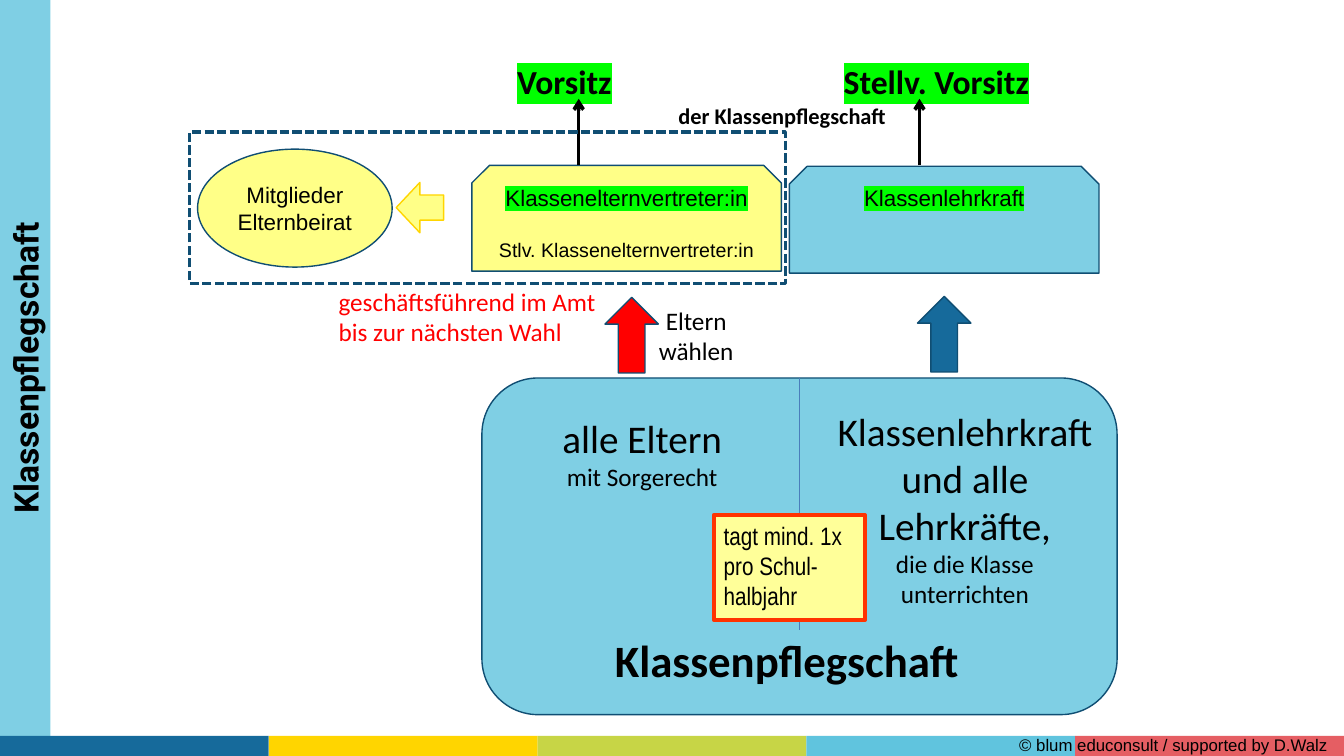
from lxml.etree import SubElement
from pptx import Presentation
from pptx.dml.color import RGBColor
from pptx.enum.dml import MSO_LINE
from pptx.enum.shapes import MSO_CONNECTOR, MSO_SHAPE
from pptx.enum.text import MSO_ANCHOR, PP_ALIGN
from pptx.oxml.ns import qn
from pptx.util import Inches, Pt

BLACK = RGBColor(0x00, 0x00, 0x00)
RED = RGBColor(0xFF, 0x00, 0x00)
ORANGE = RGBColor(0xFF, 0x33, 0x00)
GREEN = RGBColor(0x00, 0xFF, 0x00)
YELLOW = RGBColor(0xFF, 0xFF, 0x87)
NOTE_YELLOW = RGBColor(0xFF, 0xFF, 0x99)
GOLD = RGBColor(0xFF, 0xD5, 0x00)
LIME = RGBColor(0xC7, 0xD5, 0x46)
SKY = RGBColor(0x60, 0xC4, 0xDE)
CORAL = RGBColor(0xE5, 0x5E, 0x63)
BLUE = RGBColor(0x16, 0x6A, 0x9B)
NAVY = RGBColor(0x10, 0x4E, 0x73)
DIVIDER = RGBColor(0x4A, 0x7E, 0xBB)


def paint(shape, color, alpha=100):
    shape.fill.solid()
    shape.fill.fore_color.rgb = color
    if alpha < 100:
        tint = shape.fill._xPr.find(qn("a:solidFill"))[0]
        SubElement(tint, qn("a:alpha")).set("val", str(alpha * 1000))


def add_block(page, kind, place, fill=None, line=NAVY, width=1, alpha=100):
    block = page.shapes.add_shape(kind, *map(Inches, place))
    block.shadow.inherit = False
    if fill is None:
        block.fill.background()
    else:
        paint(block, fill, alpha)
    if line is None:
        block.line.fill.background()
    else:
        block.line.color.rgb = line
        block.line.width = Pt(width)
    return block


def add_line(page, start, end, color, width, arrow=False):
    points = map(Inches, (*start, *end))
    line = page.shapes.add_connector(MSO_CONNECTOR.STRAIGHT, *points)
    line.line.color.rgb = color
    line.line.width = Pt(width)
    properties = line._element.spPr
    if arrow:
        SubElement(properties.find(qn("a:ln")), qn("a:tailEnd")).set("type", "arrow")
    SubElement(properties, qn("a:effectLst"))


def add_span(para, text, size, font="Calibri", color=BLACK, bold=False, mark=None):
    span = para.add_run()
    span.text = text
    span.font.size = Pt(size)
    span.font.bold = bold
    span.font.color.rgb = color
    if mark is not None:
        highlight = SubElement(span.font._element, qn("a:highlight"))
        SubElement(highlight, qn("a:srgbClr")).set("val", str(mark))
    span.font.name = font


def write(shape, lines, align=PP_ALIGN.CENTER, anchor=MSO_ANCHOR.MIDDLE, wrap=True):
    """Each line is a (text, size, options) tuple and becomes one paragraph."""
    frame = shape.text_frame
    frame.word_wrap = wrap
    frame.vertical_anchor = anchor
    for number, (text, size, options) in enumerate(lines):
        para = frame.paragraphs[0] if number == 0 else frame.add_paragraph()
        para.alignment = align
        add_span(para, text, size, **options)
    return frame


def add_label(page, place, lines, align=PP_ALIGN.CENTER, wrap=True):
    box = page.shapes.add_textbox(*map(Inches, place))
    write(box, lines, align, MSO_ANCHOR.TOP, wrap)


def add_tab(para, position):
    tabs = SubElement(para._p.get_or_add_pPr(), qn("a:tabLst"))
    SubElement(tabs, qn("a:tab"), pos=str(Inches(position)), algn="l")


def add_frame(page):
    # Colour band along the bottom
    band = 13.33 / 5
    for number, color in enumerate((BLUE, GOLD, LIME, SKY, CORAL)):
        add_block(page, MSO_SHAPE.RECTANGLE, (number * band, 7.3, band, 0.2), color, None)

    # Title as a vertical side bar
    title = page.shapes.title
    title.left, title.top, title.width, title.height = map(Inches, (-3.4, 3.4, 7.3, 0.5))
    title.rotation = 270
    paint(title, SKY, 80)
    write(title, [("Klassenpflegschaft", 24, {"font": "Roboto", "bold": True})])


def add_assembly(page):
    # Large box with its two halves
    add_block(page, MSO_SHAPE.ROUNDED_RECTANGLE, (4.78, 3.75, 6.3, 3.34), SKY, alpha=80)
    add_line(page, (7.93, 3.75), (7.93, 6.25), DIVIDER, 0.75)
    add_label(page, (4.95, 4.06, 2.84, 0.93),
              [("alle Eltern", 28, {}), ("mit Sorgerecht", 18, {})])
    add_label(page, (8.15, 3.99, 2.84, 2.12),
              [("Klassenlehrkraft und alle Lehrkräfte,", 28, {}),
               ("die die Klasse unterrichten", 18, {})])
    add_label(page, (6, 6.23, 3.65, 0.68),
              [("Klassenpflegschaft", 32, {"bold": True})], PP_ALIGN.LEFT, False)

    # Arrows up to the representatives
    add_block(page, MSO_SHAPE.UP_ARROW, (6, 2.95, 0.53, 0.75), RED)
    add_block(page, MSO_SHAPE.UP_ARROW, (9.1, 2.94, 0.53, 0.75), BLUE)
    add_label(page, (6.43, 2.98, 0.95, 0.75),
              [("Eltern", 18, {}), ("wählen", 18, {})], wrap=False)


def add_representatives(page):
    arial = {"font": "Arial"}
    marked = {"font": "Arial", "mark": GREEN}
    snipped = MSO_SHAPE.SNIP_2_SAME_RECTANGLE

    parents = add_block(page, snipped, (4.68, 1.64, 3.07, 1.05), YELLOW)
    frame = write(parents, [("Klassenelternvertreter:in", 16, marked),
                            ("Stlv. Klassenelternvertreter:in", 14, arial)])
    frame.paragraphs[1].space_before = Pt(19)

    teacher = add_block(page, snipped, (7.83, 1.65, 3.07, 1.06), SKY, alpha=80)
    frame = write(teacher, [("Klassenlehrkraft", 16, marked)], anchor=MSO_ANCHOR.TOP)
    frame.margin_top = Inches(0.09)

    # Chair and deputy chair
    chair = page.shapes.add_textbox(*map(Inches, (5.03, 0.56, 6.14, 0.77)))
    chair.text_frame.word_wrap = True
    offices = chair.text_frame.paragraphs[0]
    add_tab(offices, 3.24)
    add_span(offices, "Vorsitz", 24, bold=True, mark=GREEN)
    add_span(offices, "\t", 16)
    add_span(offices, "Stellv. Vorsitz", 24, bold=True, mark=GREEN)
    body = chair.text_frame.add_paragraph()
    add_tab(body, 1.6)
    add_span(body, "\tder Klassenpflegschaft", 16, bold=True)
    for x in (5.74, 9.12):
        add_line(page, (x, 1.64), (x, 0.98), BLACK, 2.5, arrow=True)

    # Parents' council inside the dashed frame
    council = add_block(page, MSO_SHAPE.OVAL, (1.96, 1.48, 1.93, 1.17), YELLOW)
    write(council, [("Mitglieder Elternbeirat", 16, arial)])
    add_block(page, MSO_SHAPE.LEFT_ARROW, (3.93, 1.81, 0.47, 0.5), YELLOW, GOLD)
    dashed = add_block(page, MSO_SHAPE.RECTANGLE, (1.88, 1.31, 5.91, 1.5), width=2.25)
    dashed.line.dash_style = MSO_LINE.SQUARE_DOT


def add_notes_on_term(page):
    # Meeting rule, term of office and credit line
    narrow = {"font": "Arial Narrow"}
    meeting = add_block(page, MSO_SHAPE.RECTANGLE, (7.08, 5.11, 1.5, 1.04),
                        NOTE_YELLOW, ORANGE, 3)
    frame = write(meeting, [("tagt mind. 1x pro Schul-", 18, narrow)],
                  PP_ALIGN.LEFT, MSO_ANCHOR.TOP)
    frame.paragraphs[0].add_line_break()
    add_span(frame.paragraphs[0], "halbjahr", 18, **narrow)
    add_label(page, (3.26, 2.79, 2.92, 0.71),
              [("geschäftsführend im Amt bis zur nächsten Wahl", 18, {"color": RED})],
              PP_ALIGN.LEFT)
    add_label(page, (10.01, 7.24, 3.31, 0.3),
              [("© blum educonsult / supported by D.Walz", 12, {"font": "Arial"})],
              PP_ALIGN.LEFT)


def main():
    deck = Presentation()
    deck.slide_width, deck.slide_height = Inches(13.33), Inches(7.5)
    page = deck.slides.add_slide(deck.slide_layouts[5])
    add_frame(page)
    add_assembly(page)
    add_representatives(page)
    add_notes_on_term(page)
    deck.save("out.pptx")


if __name__ == "__main__":
    main()
